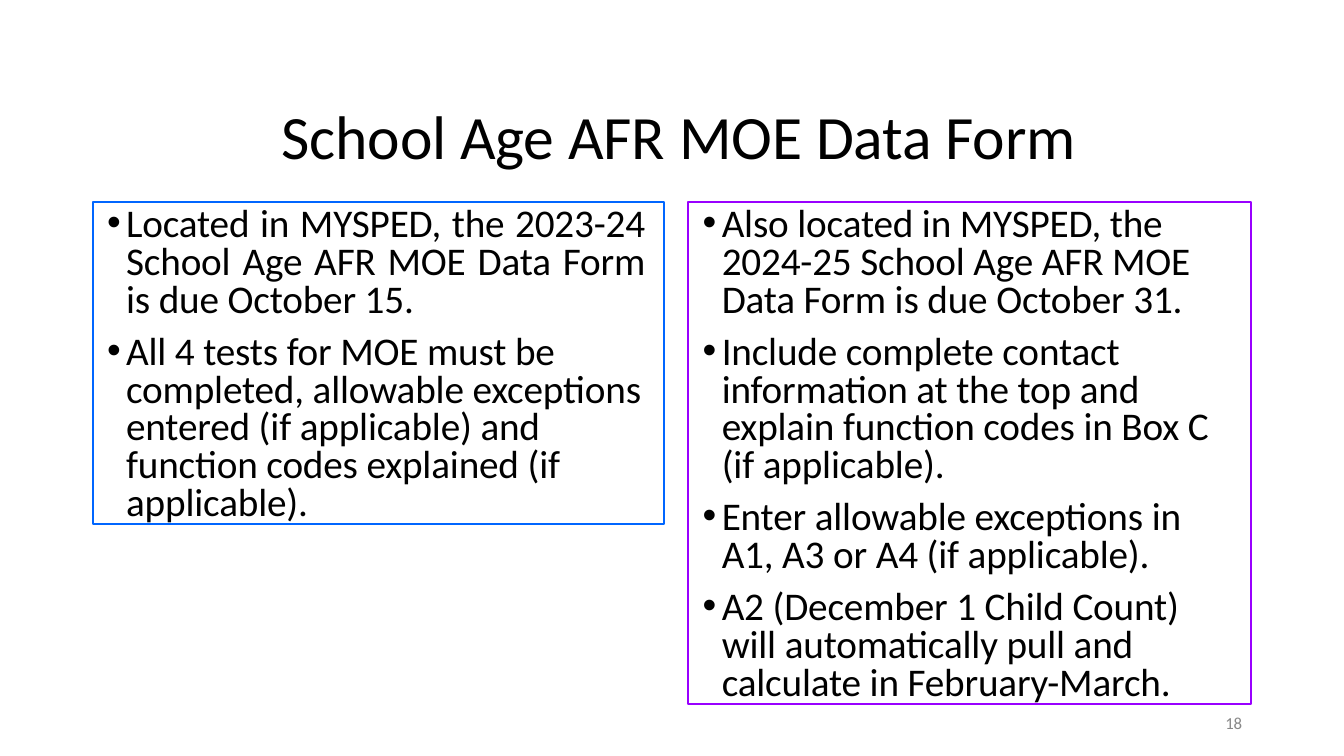
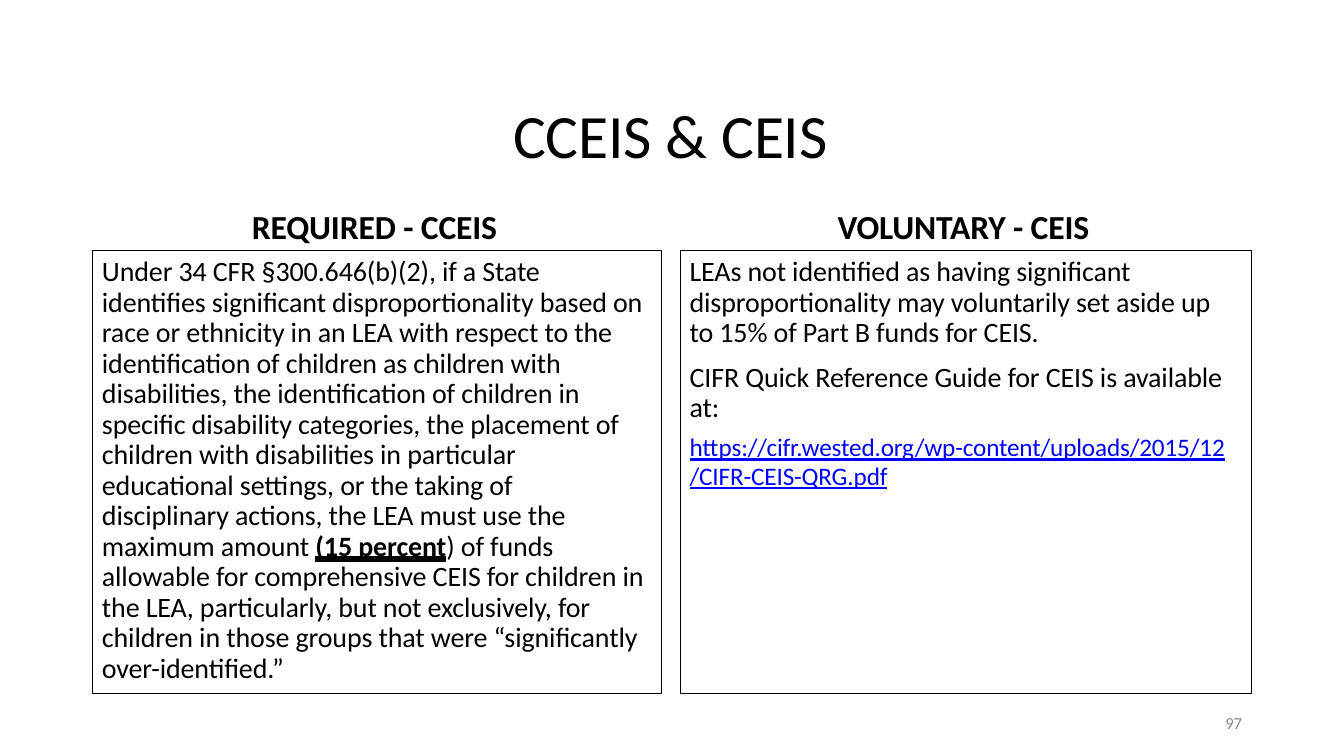
import pptx
import pptx.util
import pptx.dml.color
import pptx.enum.shapes
import pptx.enum.text
import lxml.etree

Cm, Pt = pptx.util.Cm, pptx.util.Pt
Align = pptx.enum.text.PP_ALIGN
Line = pptx.enum.text.MSO_UNDERLINE

INK, GREY, LINK = "000000", "888888", "0000FF"
HEAVY = {"bold": True, "underline": Line.HEAVY_LINE}
URL = {"size": Pt(18), "underline": True, "color": LINK}

PAGES = [
    {
        "title": ("School Age AFR MOE Data Form", (7.09, 2.46, 20.17, 1.98)),
        "page": "18",
        "heads": [],
        "boxes": [
            {
                "at": (2.34, 5.08, 14.4, 8.13), "edge": ("0066FF", 1.5),
                "size": 28, "bullet": True, "inset": (0, 0.48),
                "paras": [
                    ([("Located in MYSPED, the 2023-24 School Age AFR MOE Data Form "
                       "is due October 15.", {})], 27, 0, Align.JUSTIFY),
                    ([("All 4 tests for MOE must be\vcompleted, allowable exceptions\v"
                       "entered (if applicable) and\vfunction codes explained (if\v"
                       "applicable).", {})], 27, 10.2, Align.LEFT),
                ],
            },
            {
                "at": (17.35, 5.08, 14.17, 12.67), "edge": ("9900FF", 1.5),
                "size": 28, "bullet": True, "inset": (0, 0),
                "paras": [
                    ([("Also located in MYSPED, the\v2024-25 School Age AFR MOE\v"
                       "Data Form is due October 31.", {})], 27, 0, Align.LEFT),
                    ([("Include complete contact\vinformation at the top and\v"
                       "explain function codes in Box C\v(if applicable).", {})],
                     27, 10.2, Align.LEFT),
                    ([("Enter allowable exceptions in\vA1, A3 or A4 (if applicable).", {})],
                     27, 10.2, Align.LEFT),
                    ([("A2 (December 1 Child Count)\vwill automatically pull and\v"
                       "calculate in February-March.", {})], 27, 10.2, Align.LEFT),
                ],
            },
        ],
    },
    {
        "title": ("CCEIS & CEIS", (12.93, 2.44, 8.03, 1.98)),
        "page": "97",
        "heads": [("REQUIRED - CCEIS", 6.35), ("VOLUNTARY - CEIS", 21.11)],
        "boxes": [
            {
                "at": (2.34, 6.32, 14.33, 11.15), "edge": (INK, 0.75),
                "size": 20, "bullet": False, "inset": (0.23, 0),
                "paras": [
                    ([("Under 34 CFR §300.646(b)(2), if a State\v"
                       "identifies significant disproportionality based on\v"
                       "race or ethnicity in an LEA with respect to the\v"
                       "identification of children as children with\v"
                       "disabilities, the identification of children in\v"
                       "specific disability categories, the placement of\v"
                       "children with disabilities in particular\v"
                       "educational settings, or the taking of\v"
                       "disciplinary actions, the LEA must use the\v"
                       "maximum amount ", {}),
                      ("(15 percent", HEAVY),
                      (") of funds\vallowable for comprehensive CEIS for children in\v"
                       "the LEA, particularly, but not exclusively, for\v"
                       "children in those groups that were “significantly\v"
                       "over-identified.”", {})], 21.8, 0, Align.LEFT),
                ],
            },
            {
                "at": (17.15, 6.32, 14.4, 11.15), "edge": (INK, 0.75),
                "size": 20, "bullet": False, "inset": (0.23, 0),
                "paras": [
                    ([("LEAs not identified as having significant\v"
                       "disproportionality may voluntarily set aside up\v"
                       "to 15% of Part B funds for CEIS.", {})], 21.8, 0, Align.LEFT),
                    ([("CIFR Quick Reference Guide for CEIS is available\vat:", {})],
                     21.5, 10.2, Align.LEFT),
                    ([("https://cifr.wested.org/wp-content/uploads/2015/12\v"
                       "/CIFR-CEIS-QRG.pdf", URL)], 20.4, 7.7, Align.LEFT),
                ],
            },
        ],
    },
]


def tint(code):
    return pptx.dml.color.RGBColor.from_string(code)


def apply(item, vals):
    for key, val in vals.items():
        setattr(item, key, val)


def place(at):
    return [Cm(n) for n in at]


def set_frame(frame, left=0, top=0, right=0, wrap=True):
    apply(frame, {
        "margin_left": Cm(left), "margin_top": Cm(top),
        "margin_right": Cm(right), "margin_bottom": 0,
        "auto_size": pptx.enum.text.MSO_AUTO_SIZE.NONE,
        "vertical_anchor": pptx.enum.text.MSO_ANCHOR.TOP,
        "word_wrap": wrap,
    })


def add_runs(para, runs, base):
    for text, style in runs:
        look = {**base, **style}
        code = look.pop("color")
        for num, part in enumerate(text.split("\v")):
            if num:
                para.add_line_break()
            run = para.add_run()
            run.text = part
            apply(run.font, {"name": "Calibri", **look})
            run.font.color.rgb = tint(code)
            run.font._element.set("spc", "-10")


def add_bullet(para):
    props = para._p.get_or_add_pPr()
    props.set("marL", str(Cm(0.84)))
    props.set("indent", str(Cm(-0.48)))
    space = props.nsmap["a"]
    for tag, key, val in (("buFont", "typeface", "Arial"), ("buChar", "char", "•")):
        lxml.etree.SubElement(props, "{%s}%s" % (space, tag)).set(key, val)


def add_label(slide, text, at, base):
    frame = slide.shapes.add_textbox(*place(at)).text_frame
    set_frame(frame, wrap=False)
    add_runs(frame.paragraphs[0], [(text, {})], base)


def add_title(slide, text, at):
    shape = slide.shapes.title
    apply(shape, dict(zip(("left", "top", "width", "height"), place(at))))
    set_frame(shape.text_frame, wrap=False)
    para = shape.text_frame.paragraphs[0]
    para.alignment = Align.LEFT
    add_runs(para, [(text, {})], {"size": Pt(44), "color": INK})


def add_box(slide, box):
    shape = slide.shapes.add_shape(
        pptx.enum.shapes.MSO_SHAPE.RECTANGLE, *place(box["at"]))
    shape.shadow.inherit = False
    shape.fill.background()
    code, width = box["edge"]
    shape.line.color.rgb = tint(code)
    shape.line.width = Pt(width)
    frame = shape.text_frame
    left, right = box["inset"]
    set_frame(frame, left, 0.15, right)
    for num, (runs, pitch, gap, align) in enumerate(box["paras"]):
        para = frame.add_paragraph() if num else frame.paragraphs[0]
        if box["bullet"]:
            add_bullet(para)
        apply(para, {"alignment": align, "line_spacing": Pt(pitch),
                     "space_before": Pt(gap)})
        add_runs(para, runs, {"size": Pt(box["size"]), "color": INK})


def main():
    deck = pptx.Presentation()
    apply(deck, {"slide_width": Cm(33.87), "slide_height": Cm(19.05)})
    for page in PAGES:
        slide = deck.slides.add_slide(deck.slide_layouts[5])
        add_title(slide, *page["title"])
        add_label(slide, page["page"], (30.88, 17.96, 0.6, 0.48),
                  {"size": Pt(12), "color": GREY})
        for text, left in page["heads"]:
            add_label(slide, text, (left, 5.18, 6.4, 1.09),
                      {"size": Pt(24), "bold": True, "color": INK})
        for box in page["boxes"]:
            add_box(slide, box)
    deck.save("out.pptx")


if __name__ == "__main__":
    main()
